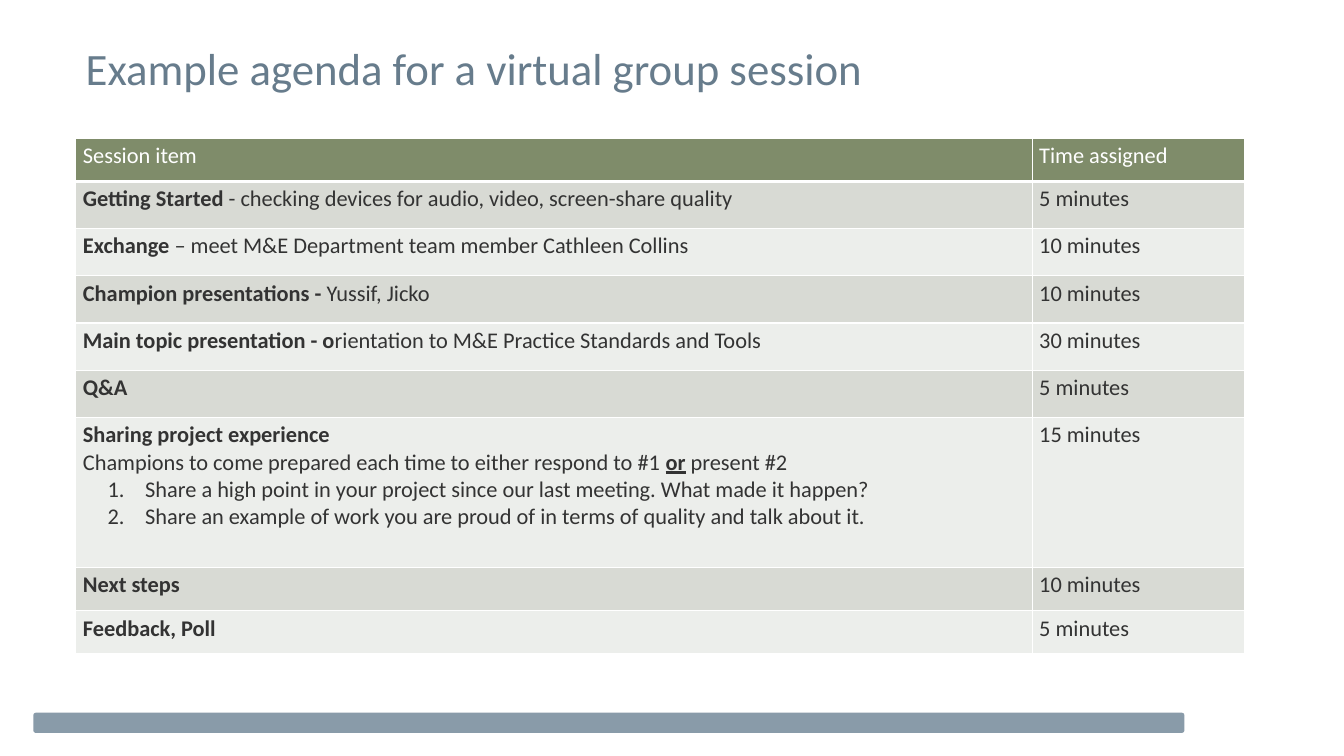
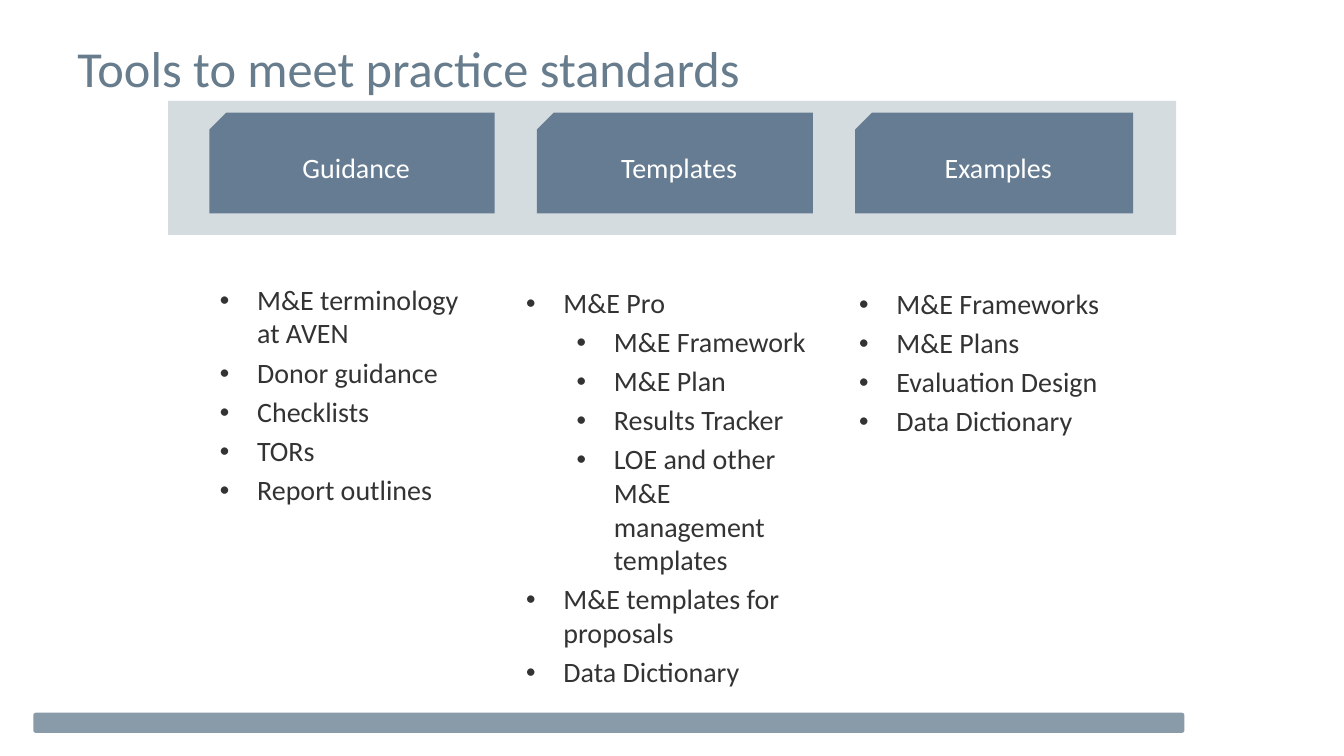
from dataclasses import dataclass
from typing import Any

from lxml.etree import SubElement
from pptx import Presentation
from pptx.dml.color import RGBColor
from pptx.enum.shapes import MSO_SHAPE
from pptx.enum.text import MSO_ANCHOR, MSO_AUTO_SIZE, PP_ALIGN
from pptx.oxml import parse_xml
from pptx.oxml.ns import nsdecls, qn
from pptx.util import Cm, Pt

FONT = "Calibri"
COLORS = {
    "title": "677C8C",
    "footer": "899BA9",
    "band": "C1CBD2",
    "card": "667C92",
    "header": "7F8C6A",
    "odd": "D8DAD4",
    "even": "ECEEEB",
    "text": "333333",
    "white": "FFFFFF",
}
CARD_GAP = 1.06


@dataclass(frozen=True)
class Run:
    text: str
    bold: bool = False
    underline: bool = False


@dataclass(frozen=True)
class Line:
    runs: tuple[Run, ...]
    numbered: bool = False


@dataclass(frozen=True)
class AgendaRow:
    lines: tuple[Line, ...]
    time: str
    height: float = 1.19


@dataclass(frozen=True)
class Bullet:
    text: str
    level: int = 0


@dataclass(frozen=True)
class Column:
    heading: str
    card_width: float
    left: float
    top: float
    width: float
    height: float
    bullets: tuple[Bullet, ...]


def item(title: str, detail: str = "") -> tuple[Line, ...]:
    """Return one agenda line with a bold title and a plain detail."""
    runs = (Run(title, bold=True),) + ((Run(detail),) if detail else ())
    return (Line(runs),)


SHARING = item("Sharing project experience") + (
    Line((
        Run("Champions to come prepared each time to either respond to #1 "),
        Run("or", bold=True, underline=True),
        Run(" present #2"),
    )),
    Line((Run("Share a high point in your project since our last meeting. What made it happen?"),), True),
    Line((Run("Share an example of work you are proud of in terms of quality and talk about it."),), True),
)

AGENDA = (
    AgendaRow((Line((Run("Session item"),)),), "Time assigned", 1.09),
    AgendaRow(item("Getting Started", " - checking devices for audio, video, screen-share quality"), "5 minutes"),
    AgendaRow(item("Exchange ", "– meet M&E Department team member Cathleen Collins"), "10 minutes"),
    AgendaRow(item("Champion presentations - ", "Yussif, Jicko"), "10 minutes"),
    AgendaRow(item("Main topic presentation - o", "rientation to M&E Practice Standards and Tools"), "30 minutes"),
    AgendaRow(item("Q&A"), "5 minutes"),
    AgendaRow(SHARING, "15 minutes", 3.78),
    AgendaRow(item("Next steps"), "10 minutes", 1.09),
    AgendaRow(item("Feedback, Poll"), "5 minutes", 1.09),
)

COLUMNS = (
    Column("Guidance", 7.19, 5.28, 6.99, 7.19, 6.07, (
        Bullet("M&E terminology at AVEN"),
        Bullet("Donor guidance"),
        Bullet("Checklists"),
        Bullet("TORs"),
        Bullet("Report outlines"),
    )),
    Column("Templates", 6.96, 13.0, 7.06, 7.95, 11.71, (
        Bullet("M&E Pro"),
        Bullet("M&E Framework", 1),
        Bullet("M&E Plan", 1),
        Bullet("Results Tracker", 1),
        Bullet("LOE and other M&E management templates", 1),
        Bullet("M&E templates for proposals"),
        Bullet("Data Dictionary"),
    )),
    Column("Examples", 7.01, 21.39, 7.09, 7.19, 5.21, (
        Bullet("M&E Frameworks"),
        Bullet("M&E Plans"),
        Bullet("Evaluation Design"),
        Bullet("Data Dictionary"),
    )),
)


def rgb(name: str) -> RGBColor:
    """Return a palette colour."""
    return RGBColor.from_string(COLORS[name])


def write(p: Any, text: str, *, size: int, color: str = "text",
          bold: bool = False, underline: bool = False) -> None:
    """Add a formatted run to a paragraph."""
    r = p.add_run()
    r.text = text
    f = r.font
    f.name, f.size, f.bold, f.underline = FONT, Pt(size), bold, underline
    f.color.rgb = rgb(color)


def paragraph(tf: Any, index: int) -> Any:
    """Return the first paragraph of a frame or a new one after it."""
    return tf.add_paragraph() if index else tf.paragraphs[0]


def mark(p: Any, tag: str, *, left: float, size: int = 100, **attrs: str) -> None:
    """Give a paragraph a hanging bullet or number."""
    pPr = p._p.get_or_add_pPr()
    pPr.set("marL", str(Cm(left)))
    pPr.set("indent", str(-Cm(0.95)))
    SubElement(pPr, qn("a:buSzPct")).set("val", str(size * 1000))
    SubElement(pPr, qn("a:buFont")).set("typeface", FONT)
    SubElement(pPr, qn(tag), attrs)


def add_box(s: Any, kind: Any, color: str, left: float, top: float,
            width: float, height: float) -> Any:
    """Add a filled shape without line or shadow."""
    sp = s.shapes.add_shape(kind, Cm(left), Cm(top), Cm(width), Cm(height))
    sp.shadow.inherit = False
    sp.fill.solid()
    sp.fill.fore_color.rgb = rgb(color)
    sp.line.fill.background()
    return sp


def add_text_box(s: Any, left: float, top: float, width: float, height: float) -> Any:
    """Add a wrapping text box and return its frame."""
    tf = s.shapes.add_textbox(Cm(left), Cm(top), Cm(width), Cm(height)).text_frame
    tf.word_wrap = True
    return tf


def add_slide(prs: Any, title: str, size: int, left: float, top: float,
              width: float, height: float) -> Any:
    """Add a blank slide with the footer bar and a title."""
    s = prs.slides.add_slide(prs.slide_layouts[6])
    bar = add_box(s, MSO_SHAPE.ROUNDED_RECTANGLE, "footer", 0.84, 17.96, 29.01, 0.51)
    bar.adjustments[0] = 0.13
    tf = add_text_box(s, left, top, width, height)
    tf.margin_top = Cm(0.18)
    write(tf.paragraphs[0], title, size=size, color="title")
    return s


def style_cell(cell: Any, fill: str, bottom: float) -> None:
    """Set the fill, margins and white borders of a cell."""
    cell.margin_left = cell.margin_right = Cm(0.18)
    cell.margin_top = cell.margin_bottom = Cm(0.1)
    cell.fill.solid()
    cell.fill.fore_color.rgb = rgb(fill)
    tcPr = cell._tc.get_or_add_tcPr()
    for i, (side, width) in enumerate((("L", 1), ("R", 1), ("T", 1), ("B", bottom))):
        tcPr.insert(i, parse_xml(
            f'<a:ln{side} {nsdecls("a")} w="{Pt(width)}"><a:solidFill>'
            f'<a:srgbClr val="{COLORS["white"]}"/></a:solidFill></a:ln{side}>'))


def add_agenda(s: Any) -> None:
    """Add the agenda table."""
    widths = (24.1, 5.36)
    height = sum(row.height for row in AGENDA)
    table = s.shapes.add_table(len(AGENDA), len(widths), Cm(1.91), Cm(3.48),
                               Cm(sum(widths)), Cm(height)).table
    for column, width in zip(table.columns, widths):
        column.width = Cm(width)
    for i, row in enumerate(AGENDA):
        table.rows[i].height = Cm(row.height)
        fill = ("odd" if i % 2 else "even") if i else "header"
        color = "text" if i else "white"
        for j, lines in enumerate((row.lines, (Line((Run(row.time),)),))):
            cell = table.cell(i, j)
            style_cell(cell, fill, 1 if i else 3)
            for k, line in enumerate(lines):
                p = paragraph(cell.text_frame, k)
                if line.numbered:
                    mark(p, "a:buAutoNum", left=1.57, type="arabicPeriod")
                for run in line.runs:
                    write(p, run.text, size=16, color=color,
                          bold=run.bold, underline=run.underline)


def add_column(s: Any, column: Column, card_left: float) -> None:
    """Add a heading card and its bullet list."""
    card = add_box(s, MSO_SHAPE.SNIP_1_RECTANGLE, "card", card_left, 2.84, column.card_width, 2.54)
    card._element.spPr.xfrm.set("flipH", "1")
    tf = card.text_frame
    tf.vertical_anchor = MSO_ANCHOR.MIDDLE
    p = tf.paragraphs[0]
    p.alignment = PP_ALIGN.CENTER
    write(p, column.heading, size=20, color="white")

    tf = add_text_box(s, column.left, column.top, column.width, column.height)
    tf.auto_size = MSO_AUTO_SIZE.SHAPE_TO_FIT_TEXT
    for i, bullet in enumerate(column.bullets):
        p = paragraph(tf, i)
        p.level = bullet.level
        if i:
            p.space_before = Pt(4)
        mark(p, "a:buChar", left=0.95 + 1.27 * bullet.level, size=75, char="•")
        write(p, bullet.text, size=20)


def add_tools(s: Any) -> None:
    """Add the translucent band with its three columns."""
    band = add_box(s, MSO_SHAPE.RECTANGLE, "band", 4.24, 2.54, 25.4, 3.38)
    color = band._element.spPr.find(".//" + qn("a:srgbClr"))
    SubElement(color, qn("a:alpha")).set("val", "67000")
    left = 5.28
    for column in COLUMNS:
        add_column(s, column, left)
        left += column.card_width + CARD_GAP


def main() -> None:
    """Build and save the presentation."""
    prs = Presentation()
    prs.slide_width, prs.slide_height = Cm(33.87), Cm(19.05)
    add_agenda(add_slide(prs, "Example agenda for a virtual group session", 32, 1.91, 0.84, 22.86, 1.78))
    add_tools(add_slide(prs, "Tools to meet practice standards", 36, 1.7, 0.76, 30.91, 2.62))
    prs.save("out.pptx")


if __name__ == "__main__":
    main()
